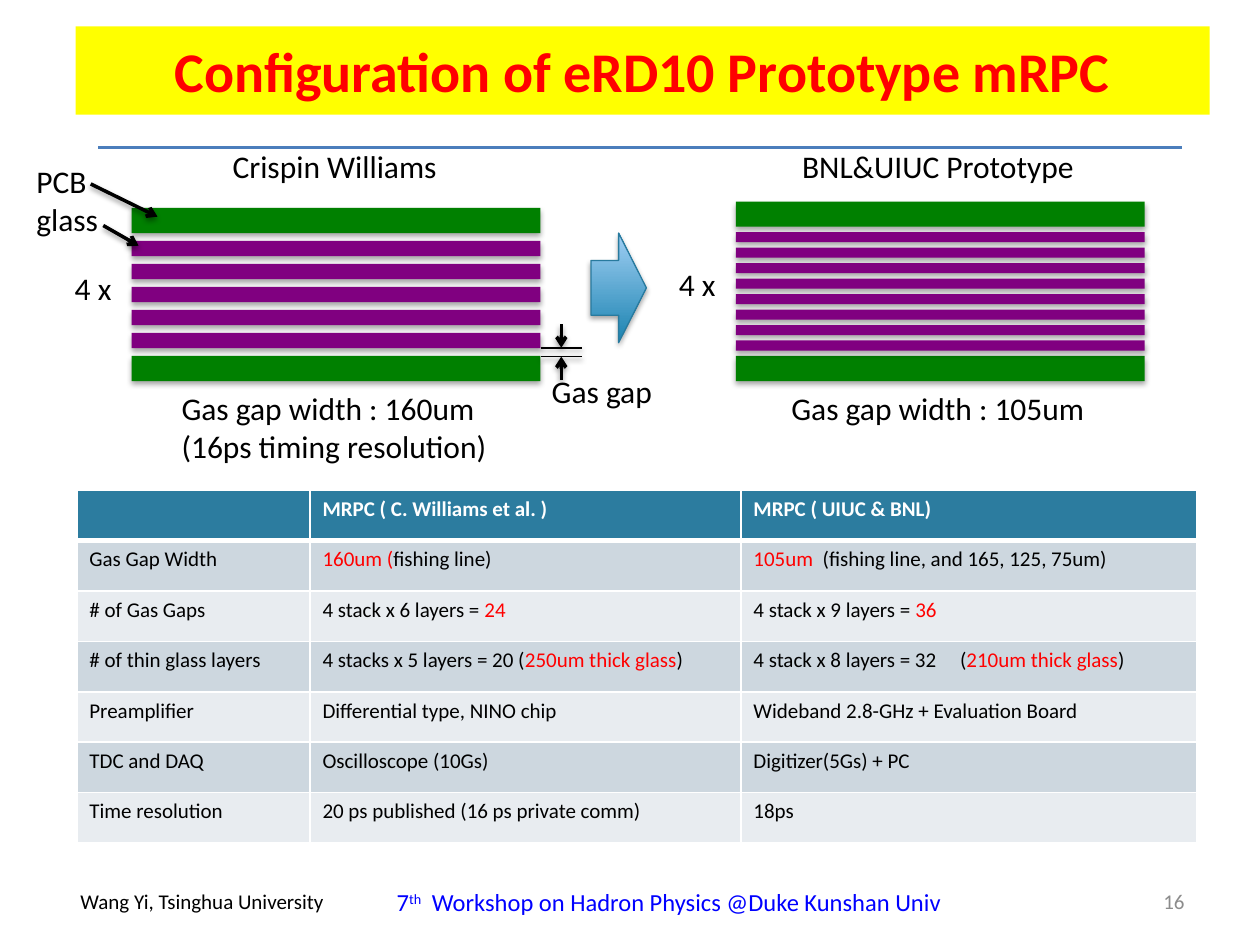
from collections import namedtuple
from dataclasses import dataclass

from lxml import etree
from pptx import Presentation
from pptx import util as u
from pptx.dml import color as dml
from pptx.enum import shapes, text
from pptx.oxml import ns

Box = namedtuple("Box", "x y w h")


@dataclass(frozen=True)
class Theme:
    """Colours, type sizes and the grid unit of the slide."""
    font: str = "Calibri"
    title: int = 32
    label: int = 18
    venue: int = 14
    small: int = 12
    black: str = "000000"
    white: str = "FFFFFF"
    red: str = "FF0000"
    blue: str = "0000FF"
    grey: str = "8C8C8C"
    yellow: str = "FFFF00"
    rule: str = "4B7EBC"
    pcb: str = "008000"
    glass: str = "800080"
    arrow: tuple = ("1B83B0", "A0CFF4")
    arrow_edge: str = "287A9E"
    header: str = "2C7C9F"
    bands: tuple = ("CDD7DF", "E8ECF0")
    unit: float = 0.1


THEME = Theme()
RED = {"color": THEME.red}


def rgb(value):
    """Turn a hex string into a colour."""
    return dml.RGBColor.from_string(value)


def grid(*cells):
    """Turn grid columns or rows into lengths."""
    return [u.Inches(cell * THEME.unit) for cell in cells]


def apply(target, formats):
    """Set each format value on the target."""
    for name, value in formats.items():
        setattr(target, name, value)


def element(parent, tag, **attributes):
    """Append a drawing element with its attributes."""
    return etree.SubElement(parent, ns.qn("a:" + tag), attributes)


def write(frame, lines, align=None, tab=None, **style):
    """Fill a text frame; each line is a list of strings or (string, override) pairs."""
    for index, line in enumerate(lines):
        paragraph = frame.add_paragraph() if index else frame.paragraphs[0]
        if tab:
            stops = element(paragraph._p.get_or_add_pPr(), "tabLst")
            element(stops, "tab", pos=str(u.Inches(tab)), algn="l")
        paragraph.alignment = align
        for part in line:
            words, override = (part, {}) if isinstance(part, str) else part
            look = {"name": THEME.font, "color": THEME.black, **style, **override}
            run = paragraph.add_run()
            run.text = words
            run.font.color.rgb = rgb(look.pop("color"))
            if "raised" in look:
                run._r.get_or_add_rPr().set("baseline", look.pop("raised"))
            apply(run.font, look)


def label(slide, box, lines, size=THEME.label, wrap=False, anchor=text.MSO_ANCHOR.TOP, **style):
    """Place free text in a box."""
    frame = slide.shapes.add_textbox(*grid(*box)).text_frame
    apply(frame, {"word_wrap": wrap, "vertical_anchor": anchor})
    write(frame, lines, size=u.Pt(size), **style)


def cast_shadow(shape, alpha=35000, distance=1.8):
    """Give a shape a soft shadow that falls straight down."""
    properties = shape._element.spPr
    effects = properties.find(ns.qn("a:effectLst"))
    if effects is None:
        effects = element(properties, "effectLst")
    shade = element(effects, "outerShdw", blurRad=str(u.Pt(3.1)), dist=str(u.Pt(distance)),
                    dir="5400000", rotWithShape="0")
    element(element(shade, "srgbClr", val=THEME.black), "alpha", val=str(alpha))


def block(slide, box, fill):
    """Draw a plain rectangle."""
    shape = slide.shapes.add_shape(shapes.MSO_SHAPE.RECTANGLE, *grid(*box))
    shape.shadow.inherit = False
    shape.fill.solid()
    shape.fill.fore_color.rgb = rgb(fill)
    shape.line.fill.background()
    return shape


def stroke(slide, start, end, width, color=THEME.black, head=False, shadow=True):
    """Draw a straight line, with an arrowhead at its end if asked."""
    line = slide.shapes.add_connector(shapes.MSO_CONNECTOR.STRAIGHT, *grid(*start, *end))
    line.line.color.rgb = rgb(color)
    line.line.width = u.Pt(width)
    if head:
        element(line.line._get_or_add_ln(), "tailEnd", type="arrow")
    if shadow:
        cast_shadow(line, 38000, 1.6)
    else:
        element(line._element.spPr, "effectLst")


def heading(slide, box):
    """Draw the title band."""
    band = block(slide, box, THEME.yellow)
    band.text_frame.vertical_anchor = text.MSO_ANCHOR.MIDDLE
    write(band.text_frame, [["Configuration of eRD10 Prototype mRPC"]], text.PP_ALIGN.CENTER,
          size=u.Pt(THEME.title), bold=True, color=THEME.red)


def detector(slide, box, caption, caption_width, stack_top, sheets, thickness, note, note_width):
    """Draw a stack of evenly spaced glass between two boards, with its labels."""
    board, note_top = 2, box.y + box.h
    top, bottom = box.y + stack_top, note_top - 0.15
    gap = (bottom - top - 2 * board - sheets * thickness) / (sheets + 1)
    for y in (top, bottom - board):
        cast_shadow(block(slide, Box(box.x, y, box.w, board), THEME.pcb))
    for sheet in range(sheets):
        y = top + board + gap + sheet * (thickness + gap)
        cast_shadow(block(slide, Box(box.x, y, box.w, thickness), THEME.glass))
    middle = box.x + box.w / 2
    label(slide, Box(middle - caption_width / 2, box.y, caption_width, 4), [[caption]])
    label(slide, Box(middle - note_width / 2, note_top, note_width, 4), [[line] for line in note])
    label(slide, Box(box.x - 5.5, (top + bottom) / 2 - 2.55, 5, 4), [["4 x"]])


def materials(slide, box):
    """Name the board and the glass and point at them."""
    label(slide, box, [["PCB"], ["glass"]])
    for start, end in (((5.3, 2.2), (10.6, 4.8)), ((6.3, 5.5), (9.1, 7.1))):
        stroke(slide, (box.x + start[0], box.y + start[1]),
               (box.x + end[0], box.y + end[1]), 2, head=True)


def gas_gap(slide, box):
    """Mark the gap between two levels with facing arrows."""
    middle, reach = box.x + box.w / 2, 1.85
    for y, side in ((box.y, -1), (box.y + box.h, 1)):
        stroke(slide, (box.x, y), (box.x + box.w, y), 1)
        stroke(slide, (middle, y + side * reach), (middle, y), 2, head=True)
    label(slide, Box(box.x - 0.1, box.y + 1.4, 10.1, 4), [["Gas gap"]])


def transition(slide, box):
    """Draw the block arrow between the detectors."""
    arrow = slide.shapes.add_shape(shapes.MSO_SHAPE.RIGHT_ARROW, *grid(*box))
    arrow.shadow.inherit = False
    arrow.fill.gradient()
    arrow.fill.gradient_angle = 90
    for stop, color in zip(arrow.fill.gradient_stops, THEME.arrow):
        stop.color.rgb = rgb(color)
    arrow.line.color.rgb = rgb(THEME.arrow_edge)
    arrow.line.width = u.Pt(0.75)
    cast_shadow(arrow)


def comparison(slide, box):
    """Build the table that compares both detectors."""
    rows = [
        ([], ["MRPC ( C. Williams et al. )"], ["MRPC ( UIUC & BNL)"]),
        (["Gas Gap Width"], [("160um (", RED), "fishing line)"],
         [("105um", RED), "\t(fishing line, and 165, 125, 75um)"]),
        (["# of Gas Gaps"], ["4 stack x 6 layers = ", ("24", RED)],
         ["4 stack x 9 layers = ", ("36", RED)]),
        (["# of thin glass layers"],
         ["4 stacks x 5 layers = 20 (", ("250um thick glass", RED), ")"],
         ["4 stack x 8 layers = 32\t(", ("210um thick glass", RED), ")"]),
        (["Preamplifier"], ["Differential type, NINO chip"],
         ["Wideband 2.8-GHz + Evaluation Board"]),
        (["TDC and DAQ"], ["Oscilloscope (10Gs)"], ["Digitizer(5Gs) + PC"]),
        (["Time resolution"], ["20 ps published (16 ps private comm)"], ["18ps"]),
    ]
    tabs = {(1, 2): 0.55, (3, 2): 1.64}
    table = slide.shapes.add_table(len(rows), 3, *grid(*box)).table
    table.horz_banding = False
    for column, width in zip(table.columns, grid(18.5, 34.2, 36.2)):
        column.width = width
    for r, row in enumerate(rows):
        edges = {"L": 1, "R": 1, "T": 3 if r == 1 else 1, "B": 1 if r else 3}
        style = {"color": THEME.black, "bold": False} if r else {"color": THEME.white, "bold": True}
        for c, content in enumerate(row):
            cell = table.cell(r, c)
            for side, width in edges.items():
                edge = element(cell._tc.get_or_add_tcPr(), "ln" + side, w=str(u.Pt(width)))
                element(element(edge, "solidFill"), "srgbClr", val=THEME.white)
            cell.fill.solid()
            cell.fill.fore_color.rgb = rgb(THEME.bands[(r - 1) % 2] if r else THEME.header)
            write(cell.text_frame, [content], tab=tabs.get((r, c)), size=u.Pt(THEME.small), **style)


def footer(slide, box):
    """Place the speaker, the venue and the page number."""
    label(slide, Box(box.x, box.y + 0.5, 21.5, 3), [["Wang Yi, Tsinghua University"]], THEME.small)
    venue = ["7", ("th", {"raised": "30000"}), "\tWorkshop on Hadron Physics @Duke Kunshan Univ"]
    label(slide, Box(box.x + 25.1, box.y + 0.4, 57, 5.5), [venue], THEME.venue, wrap=True,
          tab=0.28, color=THEME.blue)
    label(slide, Box(box.x + box.w - 23.3, box.y, 23.3, box.h), [["16"]], THEME.small, wrap=True,
          anchor=text.MSO_ANCHOR.MIDDLE, align=text.PP_ALIGN.RIGHT, color=THEME.grey)


def main():
    """Build the slide and save it."""
    deck = Presentation()
    deck.slide_width, deck.slide_height = grid(100, 75)
    slide = deck.slides.add_slide(deck.slide_layouts[6])
    stroke(slide, (7.8, 11.7), (93.8, 11.7), 2, THEME.rule, shadow=False)
    footer(slide, Box(5.4, 69.5, 89.6, 4))
    comparison(slide, Box(6.1, 38.9, 88.9, 28))
    heading(slide, Box(6, 2.1, 90, 7))
    detector(slide, Box(58.4, 11.2, 32.45, 19.2), "BNL&UIUC Prototype", 23.9, 4.8, 8, 0.8,
             ["Gas gap width : 105um"], 25.6)
    detector(slide, Box(10.45, 11.2, 32.45, 19.2), "Crispin Williams", 18.4, 5.3, 5, 1.2,
             ["Gas gap width : 160um", "(16ps timing resolution)"], 26.5)
    transition(slide, Box(46.9, 18.5, 4.4, 8.7))
    gas_gap(slide, Box(42.9, 27.6, 3.3, 0.7))
    materials(slide, Box(1.9, 12.4, 7, 7.1))
    deck.save("out.pptx")


if __name__ == "__main__":
    main()
